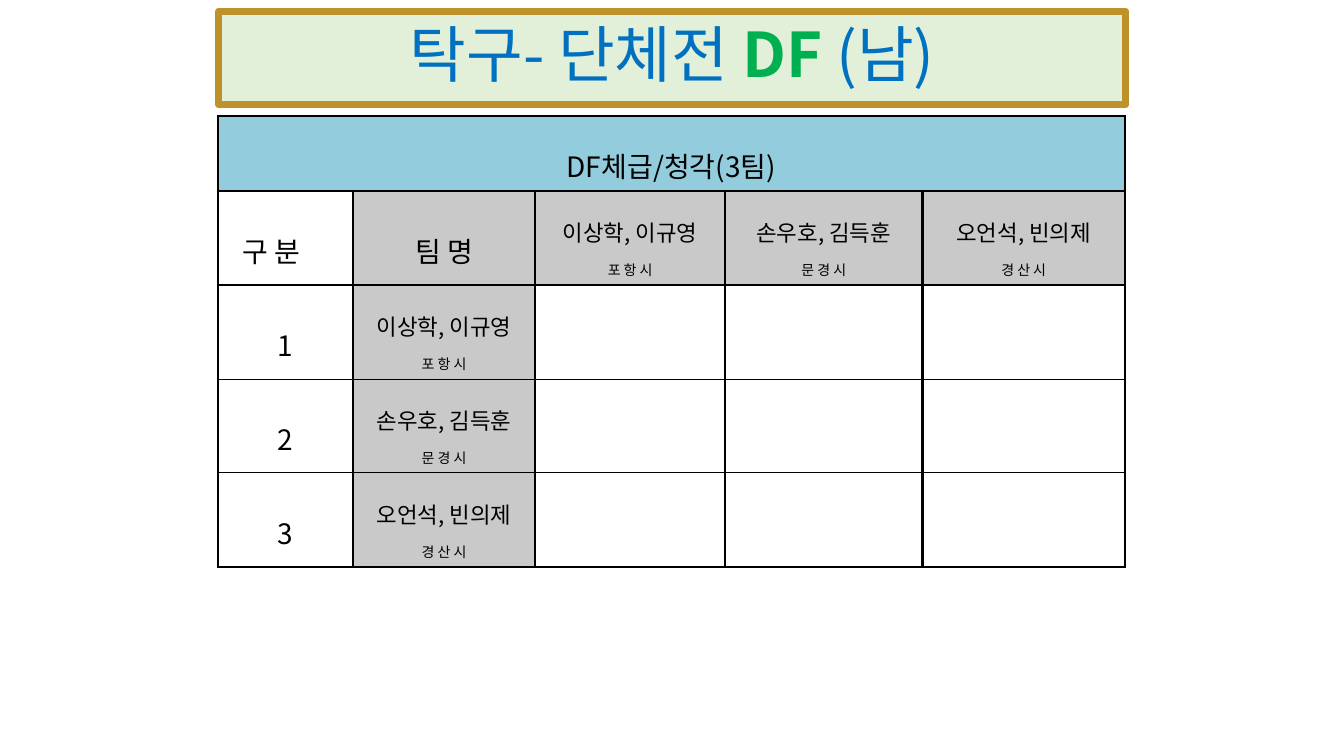
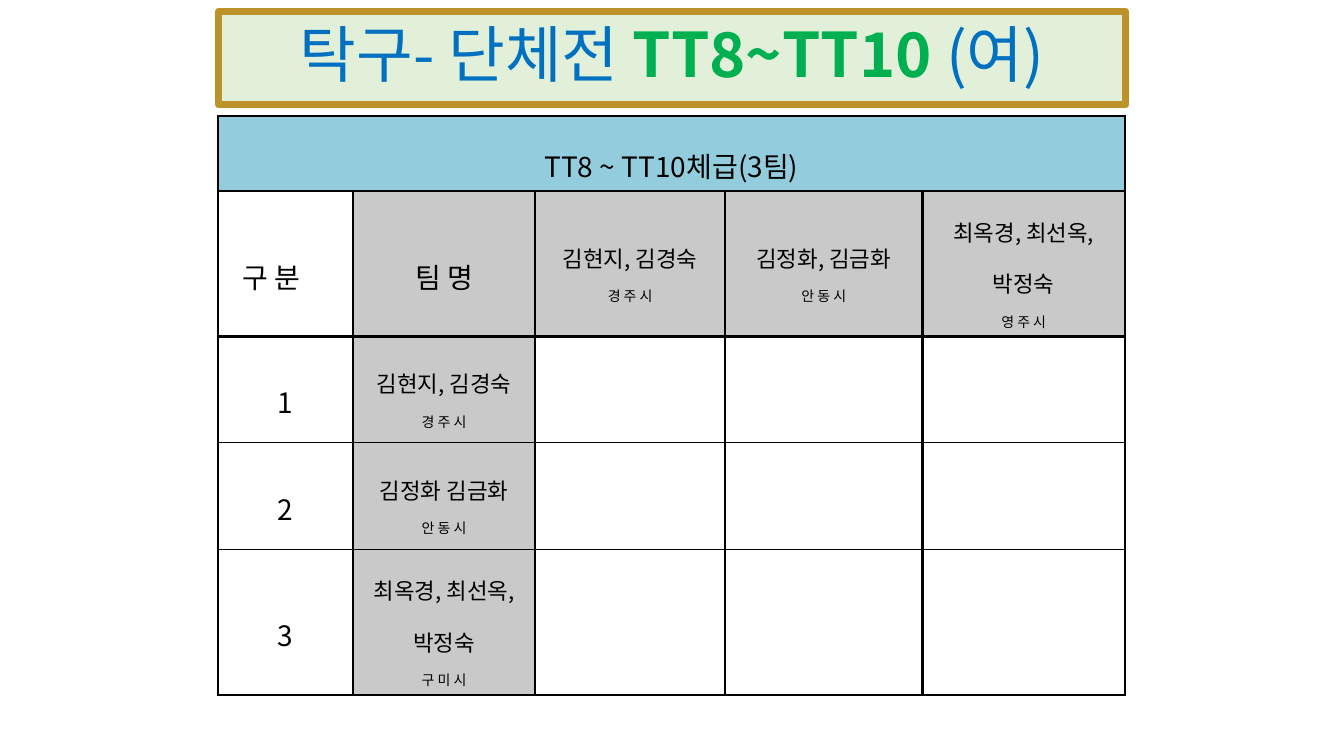
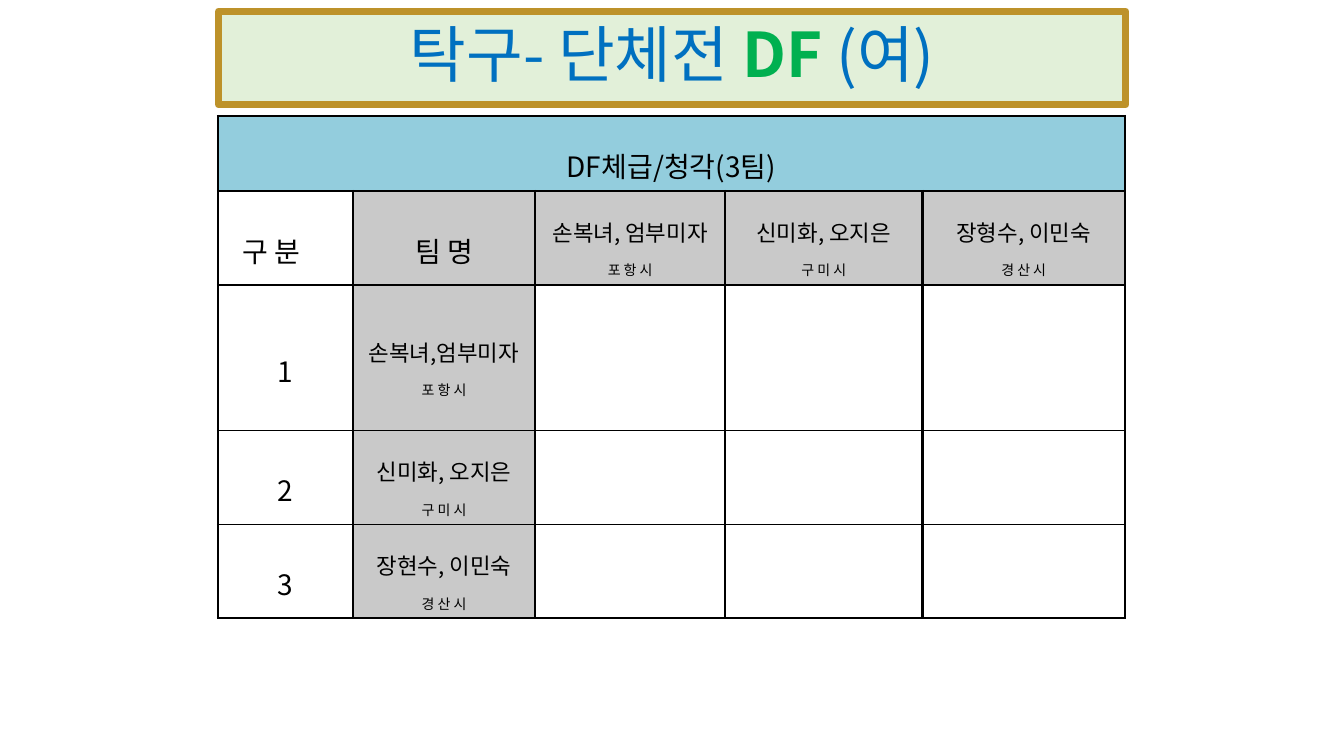
from dataclasses import dataclass
from lxml.etree import SubElement as Sub
from pptx import Presentation
from pptx.dml.color import RGBColor as Rgb
from pptx.enum.text import MSO_ANCHOR as Anchor, MSO_AUTO_SIZE as Auto, PP_ALIGN as Align
from pptx.oxml.ns import qn
from pptx.util import Cm, Pt


@dataclass(frozen=True)
class Theme:
    face: str = "Noto Sans CJK KR"
    blue: str = "0070C0"
    green: str = "00B050"
    pale: str = "E2F0D9"
    gold: str = "BD922A"
    sky: str = "93CDDD"
    gray: str = "C9C9C9"
    white: str = "FFFFFF"
    black: str = "000000"
    title: int = 44
    head: int = 20
    team: int = 16
    city: int = 10
    frame: float = 5
    thick: float = 1.7
    thin: float = 0.56


T = Theme()

DECK = [
    {
        "group": "DF ", "sex": "(남)", "band": "DF체급/청각(3팀)",
        "top": [("이상학, 이규영", "포 항 시"), ("손우호, 김득훈", "문 경 시"), ("오언석, 빈의제", "경 산 시")],
        "side": [("이상학, 이규영", "포 항 시"), ("손우호, 김득훈", "문 경 시"), ("오언석, 빈의제", "경 산 시")],
        "rows": [1.6, 2.01, 2.01, 2.01, 2.01],
    },
    {
        "group": "TT8~TT10 ", "sex": "(여)", "band": "TT8 ~ TT10체급(3팀)",
        "top": [("김현지, 김경숙", "경 주 시"), ("김정화, 김금화", "안 동 시"), ("최옥경, 최선옥, 박정숙", "영 주 시")],
        "side": [("김현지, 김경숙", "경 주 시"), ("김정화 김금화", "안 동 시"), ("최옥경, 최선옥, 박정숙", "구 미 시")],
        "rows": [1.6, 2.01, 2.67, 2.69, 2.01],
    },
    {
        "group": "DF ", "sex": "(여)", "band": "DF체급/청각(3팀)",
        "top": [("손복녀, 엄부미자", "포 항 시"), ("신미화, 오지은", "구 미 시"), ("장형수, 이민숙", "경 산 시")],
        "side": [("손복녀,엄부미자", "포 항 시"), ("신미화, 오지은", "구 미 시"), ("장현수, 이민숙", "경 산 시")],
        "rows": [1.6, 2.01, 2.01, 2.01, 2.01],
    },
]
COLS = [3.4, 4.6, 4.78, 4.98, 5.1]
BOX = {"left": Cm(5.51), "top": Cm(0.28), "width": Cm(22.86), "height": Cm(2.36)}
FRAME = {"auto_size": Auto.NONE, "word_wrap": True, "vertical_anchor": Anchor.MIDDLE}
FLAGS = {"first_row": False, "horz_banding": False}


def apply(item, form):
    for key, val in form.items():
        setattr(item, key, val)


def paint(fill, tint):
    fill.solid()
    fill.fore_color.rgb = Rgb.from_string(tint)


def write(para, text, size, tint, bold=False):
    run = para.add_run()
    run.text = text
    apply(run.font, {"size": Pt(size), "name": T.face, "bold": bold})
    run.font.color.rgb = Rgb.from_string(tint)
    Sub(run.font._element, qn("a:ea"), typeface=T.face)


def edge(cell, side, width):
    line = Sub(cell._tc.get_or_add_tcPr(), qn("a:ln" + side), w=str(Pt(width)))
    Sub(Sub(line, qn("a:solidFill")), qn("a:srgbClr"), val=T.black)


def style(cell, lines, tint, above, below):
    for side, width in zip("LRTB", (T.thick, T.thick, above, below)):
        edge(cell, side, width)
    paint(cell.fill, tint)
    cell.vertical_anchor = Anchor.MIDDLE
    frame = cell.text_frame
    for n, (text, size) in enumerate(lines):
        para = frame.add_paragraph() if n else frame.paragraphs[0]
        apply(para, {"alignment": Align.CENTER, "line_spacing": 1.6})
        write(para, text, size, T.black)


def add_title(slide, data):
    box = slide.shapes.title
    apply(box, BOX)
    apply(box.text_frame, FRAME)
    paint(box.fill, T.pale)
    paint(box.line.fill, T.gold)
    box.line.width = Pt(T.frame)
    para = box.text_frame.paragraphs[0]
    apply(para, {"alignment": Align.CENTER, "line_spacing": 0.9})
    write(para, "탁구- 단체전 ", T.title, T.blue)
    write(para, data["group"], T.title, T.green, True)
    write(para, data["sex"], T.title, T.blue)


def team(pair):
    return list(zip(pair, (T.team, T.city)))


def add_draw(slide, data):
    rows = data["rows"]
    grid = slide.shapes.add_table(
        len(rows), len(COLS), Cm(5.49), Cm(2.92), Cm(sum(COLS)), Cm(sum(rows))).table
    apply(grid, FLAGS)
    for col, width in zip(grid.columns, COLS):
        col.width = Cm(width)
    for row, height in zip(grid.rows, rows):
        row.height = Cm(height)
    grid.cell(0, 0).merge(grid.cell(0, len(COLS) - 1))
    text = [[[(data["band"], T.head)]] + [[]] * 4]
    text.append([[("구 분　", T.head)], [("팀 명", T.head)], *map(team, data["top"])])
    for n, pair in enumerate(data["side"], 1):
        text.append([[(str(n), T.head)], team(pair), [], [], []])
    last = len(rows) - 1
    for r, line in enumerate(text):
        above = T.thin if r > 2 else T.thick
        below = T.thin if 1 < r < last else T.thick
        for c, lines in enumerate(line):
            gray = c == 1 or (r == 1 and c > 0)
            tint = T.sky if r == 0 else T.gray if gray else T.white
            style(grid.cell(r, c), lines, tint, above, below)


def main():
    deck = Presentation()
    apply(deck, {"slide_width": Cm(33.87), "slide_height": Cm(19.05)})
    for data in DECK:
        slide = deck.slides.add_slide(deck.slide_layouts.get_by_name("Title Only"))
        add_title(slide, data)
        add_draw(slide, data)
    deck.save("out.pptx")


if __name__ == "__main__":
    main()
